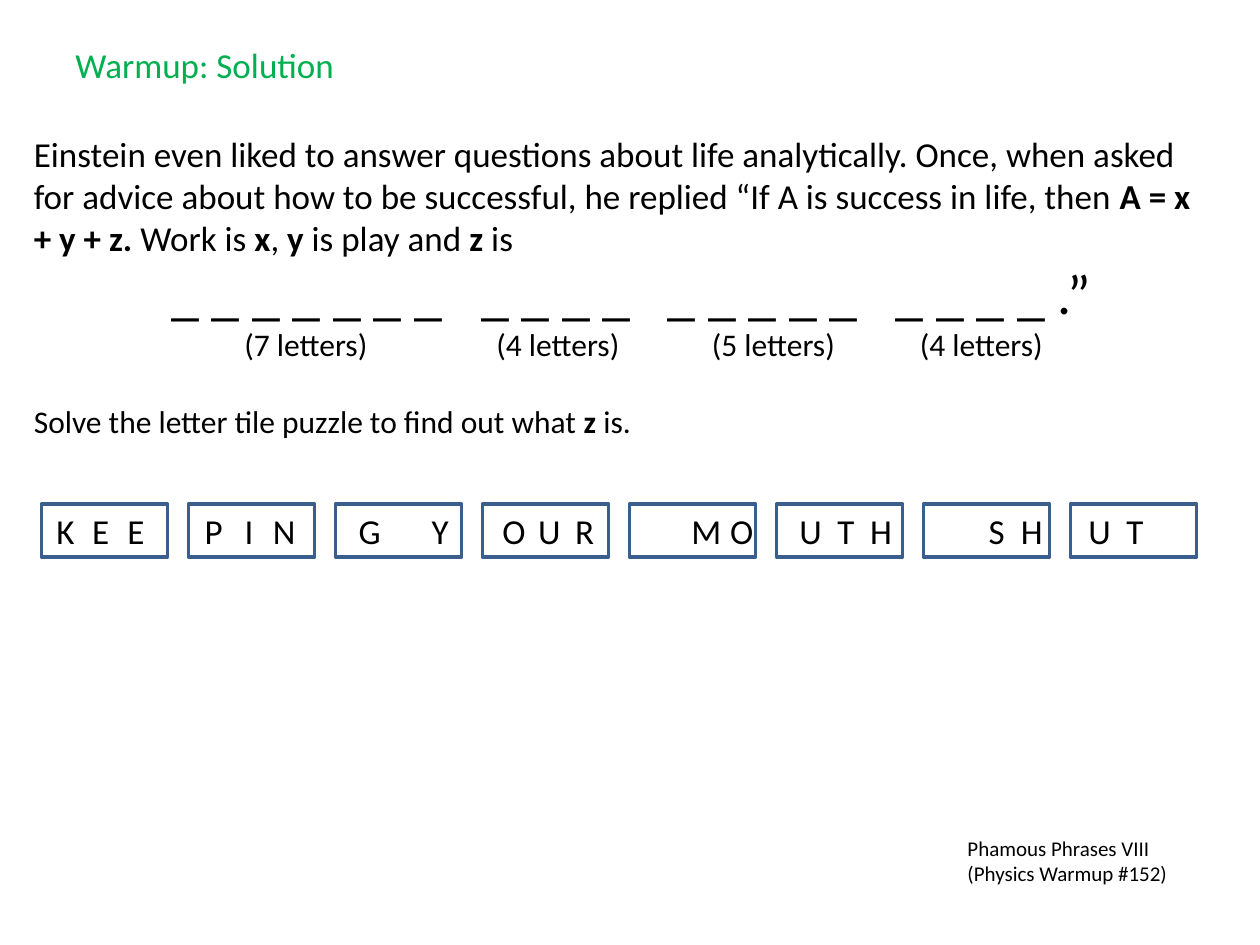
from dataclasses import dataclass

from lxml.etree import SubElement
from pptx import Presentation
from pptx.dml.color import RGBColor
from pptx.enum.shapes import MSO_SHAPE as Shape
from pptx.enum.text import MSO_ANCHOR as Anchor, PP_ALIGN as Align
from pptx.oxml.ns import qn
from pptx.util import Inches, Pt

COLORS = {"title": "00B050", "text": "000000", "outline": "3A5F8C"}
FONT = "Calibri"
TILE_LEFT, TILE_TOP, TILE_WIDTH, TILE_HEIGHT = 0.33, 4, 1, 0.42
TILE_PITCH = 3.5 / 3
LETTER_PITCH = 0.28


@dataclass(frozen=True)
class Tile:
    letters: str  # three slots, a blank marks a word break
    start: float  # centre of the first slot, from the tile's left edge


TILES = [
    Tile("KEE", 0.19), Tile("PIN", 0.2), Tile("G Y", 0.27), Tile("OUR", 0.25),
    Tile(" MO", 0.33), Tile("UTH", 0.27), Tile(" SH", 0.3), Tile("UT ", 0.23),
]


@dataclass(frozen=True)
class Word:
    length: int
    blanks_at: float
    label_at: float


WORDS = [Word(7, 1.09, 2.16), Word(4, 3.55, 4.16),
         Word(5, 5.03, 5.87), Word(4, 6.84, 7.52)]


def add_run(paragraph, text: str, size: float, color: str = "text",
            bold: bool = False) -> None:
    run = paragraph.add_run()
    run.text = text
    run.font.name = FONT
    run.font.size = Pt(size)
    run.font.bold = bold
    run.font.color.rgb = RGBColor.from_string(COLORS[color])


def add_mixed(paragraph, parts: list[str], size: float) -> None:
    """Add alternating regular and bold runs."""
    for i, part in enumerate(parts):
        add_run(paragraph, part, size, bold=i % 2 == 1)


def set_tabs(paragraph, stops: list[float], align: str) -> None:
    tabs = SubElement(paragraph._p.get_or_add_pPr(), qn("a:tabLst"))
    for stop in stops:
        SubElement(tabs, qn("a:tab"), pos=str(int(Inches(stop))), algn=align)


def add_tabbed(paragraph, entries: list[str], stops: list[float],
               align: str, size: float) -> None:
    set_tabs(paragraph, stops, align)
    for entry in entries:
        add_run(paragraph, "\t" + entry, size)


def add_box(slide, left: float, top: float, width: float, height: float):
    box = slide.shapes.add_textbox(
        Inches(left), Inches(top), Inches(width), Inches(height))
    box.text_frame.word_wrap = True
    return box.text_frame


def add_tile(slide, index: int, tile: Tile) -> None:
    rect = slide.shapes.add_shape(
        Shape.RECTANGLE, Inches(TILE_LEFT + index * TILE_PITCH),
        Inches(TILE_TOP), Inches(TILE_WIDTH), Inches(TILE_HEIGHT))
    rect.shadow.inherit = False
    rect.fill.background()
    rect.line.color.rgb = RGBColor.from_string(COLORS["outline"])
    rect.line.width = Pt(2)
    frame = rect.text_frame
    frame.margin_left = frame.margin_right = 0
    frame.margin_top = frame.margin_bottom = 0
    frame.vertical_anchor = Anchor.MIDDLE
    frame.word_wrap = True
    paragraph = frame.paragraphs[0]
    paragraph.alignment = Align.LEFT
    slots = [(letter, tile.start + i * LETTER_PITCH)
             for i, letter in enumerate(tile.letters) if letter != " "]
    add_tabbed(paragraph, [letter for letter, _ in slots],
               [stop for _, stop in slots], "ctr", 20)


def main() -> None:
    prs = Presentation()
    prs.slide_width, prs.slide_height = Inches(10), Inches(7.5)
    slide = prs.slides.add_slide(prs.slide_layouts[6])

    # Title and puzzle name
    title = add_box(slide, 0.5, 0.3, 9, 0.53)
    add_run(title.paragraphs[0], "Warmup: Solution", 20, "title")
    puzzle_name = add_box(slide, 7.58, 6.58, 2.08, 0.5)
    add_run(puzzle_name.paragraphs[0],
            "Phamous Phrases VIII (Physics Warmup #152)", 12)

    # Quotation
    puzzle = add_box(slide, 0.17, 1, 9.42, 2.9)
    add_mixed(puzzle.paragraphs[0], [
        "Einstein even liked to answer questions about life analytically. "
        "Once, when asked for advice about how to be successful, he replied "
        "“If A is success in life, then ",
        "A = x + y + z. ", "Work is ", "x", ", ", "y", " is play and ", "z",
        " is"], 20)

    # Blanks and letter counts
    blanks = [" ".join("_" * word.length) for word in WORDS]
    blanks[-1] += " .”"
    add_tabbed(puzzle.add_paragraph(), blanks,
               [word.blanks_at for word in WORDS], "l", 32)
    add_tabbed(puzzle.add_paragraph(),
               [f"({word.length} letters)" for word in WORDS],
               [word.label_at for word in WORDS], "ctr", 18)

    # Instruction
    instruction = puzzle.add_paragraph()
    instruction.space_before = Pt(22)
    add_mixed(instruction, ["Solve the letter tile puzzle to find out what ",
                            "z", " is."], 18)

    # Letter tiles
    for index, tile in enumerate(TILES):
        add_tile(slide, index, tile)

    prs.save("out.pptx")


if __name__ == "__main__":
    main()
